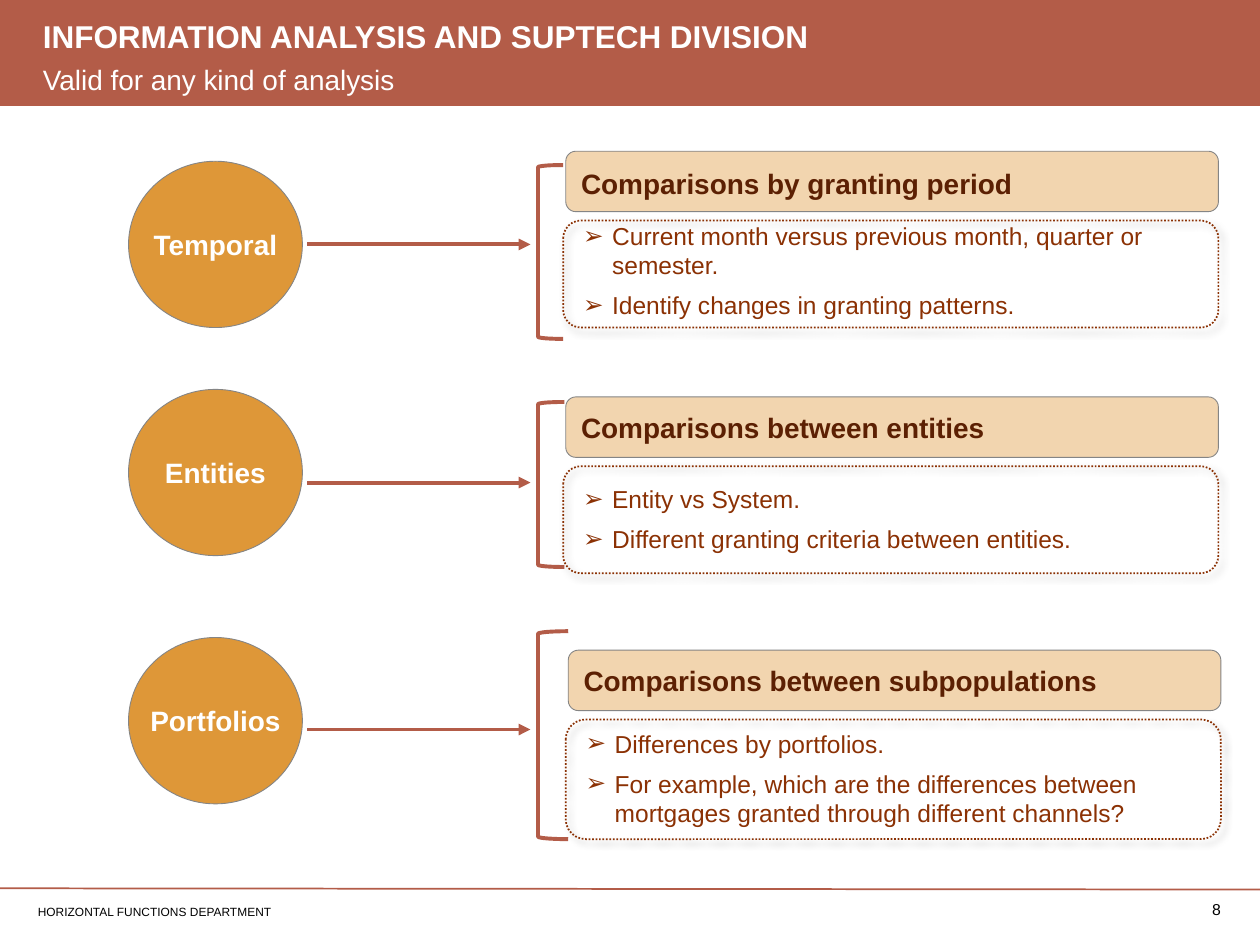
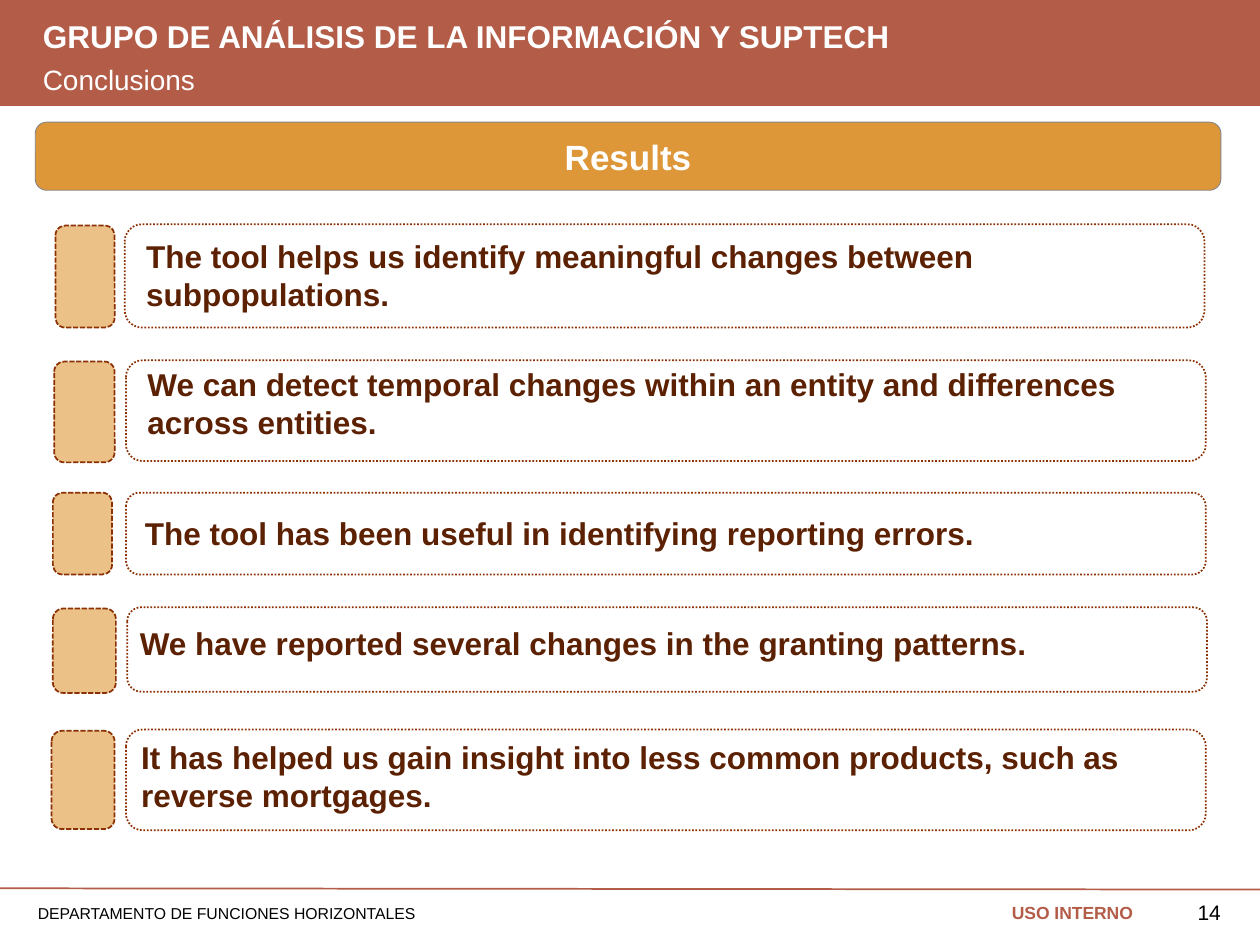
from lxml.etree import SubElement
from pptx import Presentation
from pptx.dml.color import RGBColor
from pptx.enum.dml import MSO_LINE
from pptx.enum.shapes import MSO_CONNECTOR, MSO_SHAPE
from pptx.enum.text import MSO_ANCHOR, MSO_AUTO_SIZE, PP_ALIGN
from pptx.oxml import parse_xml
from pptx.oxml.ns import nsdecls, qn
from pptx.util import Inches, Pt

HUES = {
    "brick": "B35C48", "amber": "DE9738", "sand": "F2D5AF", "tan": "EBC188",
    "rust": "8B3104", "brown": "5C2003", "gray": "858585",
    "white": "FFFFFF", "black": "000000",
}
RGB = {name: RGBColor.from_string(code) for name, code in HUES.items()}
FONT = "Arial"
ROUND = MSO_SHAPE.ROUNDED_RECTANGLE
SHADE = (f'<a:effectLst {nsdecls("a")}><a:outerShdw blurRad="50800" dist="38100" '
         'dir="2700000" algn="tl" rotWithShape="0"><a:srgbClr val="000000">'
         '<a:alpha val="40000"/></a:srgbClr></a:outerShdw></a:effectLst>')


def box(slide, kind, at, fill=None, line=None, width=0.5, dash=None):
    """Add a preset shape; a kind of None gives a text box."""
    spot = [Inches(n) for n in at]
    if kind is None:
        return slide.shapes.add_textbox(*spot)
    shape = slide.shapes.add_shape(kind, *spot)
    shape.shadow.inherit = False
    for part, hue in ((shape.fill, fill), (shape.line.fill, line)):
        if hue:
            part.solid()
            part.fore_color.rgb = RGB[hue]
        else:
            part.background()
    if line:
        shape.line.width = Pt(width)
        shape.line.dash_style = dash
    return shape


def write(shape, text, size, hue, bold=False, align=PP_ALIGN.LEFT,
          anchor=MSO_ANCHOR.TOP, pads=(0.1, 0.05, 0.1, 0.05),
          space=1.0, gap=0, mark=None, wrap=True):
    """Put text in a shape, one paragraph a line."""
    frame = shape.text_frame
    frame.text = text
    frame.word_wrap = wrap
    frame.auto_size = MSO_AUTO_SIZE.NONE
    frame.vertical_anchor = anchor
    (frame.margin_left, frame.margin_top,
     frame.margin_right, frame.margin_bottom) = [Inches(n) for n in pads]
    for i, para in enumerate(frame.paragraphs):
        props = para._p.get_or_add_pPr()
        dent = Inches(0.23) if mark else 0
        props.set("marL", str(dent))
        props.set("indent", str(-dent))
        if mark:
            SubElement(props, qn("a:buFont")).set("typeface", FONT)
            SubElement(props, qn("a:buChar")).set("char", mark)
        else:
            SubElement(props, qn("a:buNone"))
        para.alignment = align
        para.line_spacing = space
        para.space_before = Pt(gap if i else 0)
        para.space_after = Pt(gap)
        for run in para.runs:
            run.font.name = FONT
            run.font.size = Pt(size)
            run.font.bold = bold
            run.font.color.rgb = RGB[hue]


deck = Presentation()
deck.slide_width, deck.slide_height = Inches(10), Inches(7.5)

# Shared frame: band, rule, title, subtitle, footer and page number
heads = [
    ("INFORMATION ANALYSIS AND SUPTECH DIVISION", "Valid for any kind of analysis",
     "HORIZONTAL FUNCTIONS DEPARTMENT", 6.8, "8", 9),
    ("GRUPO DE ANÁLISIS DE LA INFORMACIÓN Y SUPTECH", "Conclusions",
     "DEPARTAMENTO DE FUNCIONES HORIZONTALES", 9, "14", 12),
]
for title, sub, foot, small, page, size in heads:
    slide = deck.slides.add_slide(deck.slide_layouts[3])
    band = box(slide, MSO_SHAPE.RECTANGLE, (0, 0, 10.01, 0.84), "brick")
    slide.shapes.element.insert(2, band.element)
    rule = slide.shapes.add_connector(
        MSO_CONNECTOR.STRAIGHT, 0, Inches(7.05), Inches(10.01), Inches(7.06))
    rule.line.color.rgb = RGB["brick"]
    rule.line.width = Pt(1)
    SubElement(rule.element.spPr, qn("a:effectLst"))
    texts = [
        (title, (0.24, 0.12, 6.97, 0.31), 18, "white", True),
        (sub, (0.24, 0.48, 6.97, 0.31), 16, "white", False),
        (foot, (0.2, 7.14, 5.86, 0.28), small, "black", False),
    ]
    for hold, (text, at, pt, hue, bold) in zip(slide.placeholders, texts):
        hold.left, hold.top, hold.width, hold.height = [Inches(n) for n in at]
        write(hold, text, pt, hue, bold, space=0.9)
    write(box(slide, None, (9.17, 7.09, 0.52, 0.33)), page, size, "black",
          align=PP_ALIGN.RIGHT, pads=(0.1, 0.05, 0, 0.05))

first, last = deck.slides

# Kinds of comparison: circle, arrow, bracket, heading and list
# name, circle top, arrow y, bracket (top, width, height), left edge,
# heading top, panel height, list top, heading spacing, heading, list
kinds = [
    ("Temporal", 1.28, 1.94, (1.31, 0.2, 1.38), 4.47, 1.2, 0.85, 1.7, 1.14,
     "Comparisons by granting period",
     "Current month versus previous month, quarter or semester.\n"
     "Identify changes in granting patterns."),
    ("Entities", 3.09, 3.83, (3.19, 0.21, 1.31), 4.47, 3.15, 0.85, 3.67, 1.0,
     "Comparisons between entities",
     "Entity vs System.\nDifferent granting criteria between entities."),
    ("Portfolios", 5.06, 5.79, (5.01, 0.24, 1.65), 4.49, 5.16, 0.95, 5.73, 1.0,
     "Comparisons between subpopulations",
     "Differences by portfolios.\nFor example, which are the differences "
     "between mortgages granted through different channels?"),
]
for name, top, mid, (y, w, h), left, htop, tall, ltop, space, head, points in kinds:
    disc = box(first, MSO_SHAPE.OVAL, (1.02, top, 1.38, 1.32), "amber", "gray")
    write(disc, name, 16, "white", True, PP_ALIGN.CENTER, MSO_ANCHOR.MIDDLE,
          pads=(0, 0, 0, 0), wrap=False)

    arrow = first.shapes.add_connector(
        MSO_CONNECTOR.STRAIGHT, Inches(2.44), Inches(mid), Inches(4.21), Inches(mid))
    arrow.line.color.rgb = RGB["brick"]
    arrow.line.width = Pt(2.25)
    SubElement(arrow.line._get_or_add_ln(), qn("a:tailEnd")).set("type", "triangle")
    SubElement(arrow.element.spPr, qn("a:effectLst"))

    box(first, MSO_SHAPE.LEFT_BRACKET, (4.27, y, w, h), None, "brick", 2.25)
    panel = box(first, ROUND, (left, htop + 0.55, 5.2, tall), None, "rust", 1,
                MSO_LINE.ROUND_DOT)
    props = panel.element.spPr
    props.replace(props.find(qn("a:effectLst")), parse_xml(SHADE))
    write(box(first, None, (left + 0.06, ltop, 5.19, 0.89)), points, 14, "rust",
          anchor=MSO_ANCHOR.MIDDLE, gap=3, mark="➢")
    write(box(first, ROUND, (left + 0.02, htop, 5.18, 0.48), "sand", "gray"),
          head, 16, "brown", True, anchor=MSO_ANCHOR.MIDDLE, space=space)

# Results banner and footer tag
write(box(last, ROUND, (0.28, 0.97, 9.41, 0.54), "amber", "gray"), "Results",
      20, "white", True, PP_ALIGN.CENTER, MSO_ANCHOR.MIDDLE)
write(box(last, None, (7.36, 7.11, 1.73, 0.32)), "USO INTERNO", 10, "brick",
      True, PP_ALIGN.RIGHT)

# Conclusions: tab, dotted panel and text
# tab (left, top, width, height), panel (left, top, height), text place, text
ends = [
    ((0.44, 1.79, 0.47, 0.81), (0.99, 1.78, 0.82), (1.09, 1.84, 8.38, 0.55),
     "The tool helps us identify meaningful changes between subpopulations."),
    ((0.43, 2.87, 0.48, 0.8), (1, 2.86, 0.8), (1.1, 2.86, 8.39, 1.2),
     "We can detect temporal changes within an entity and differences across entities."),
    ((0.42, 3.91, 0.47, 0.65), (1, 3.91, 0.65), (1.08, 4.04, 8.41, 0.42),
     "The tool has been useful in identifying reporting errors."),
    ((0.42, 4.83, 0.5, 0.67), (1.01, 4.82, 0.67), (1.04, 4.91, 8.45, 0.71),
     "We have reported several changes in the granting patterns."),
    ((0.41, 5.8, 0.5, 0.78), (1, 5.79, 0.8), (1.05, 5.82, 8.45, 0.71),
     "It has helped us gain insight into less common products, such as "
     "reverse mortgages."),
]
for tab, (left, top, tall), at, text in ends:
    box(last, ROUND, tab, "tan", "rust", 1, MSO_LINE.SQUARE_DOT)
    box(last, ROUND, (left, top, 8.57, tall), None, "rust", 1, MSO_LINE.ROUND_DOT)
    write(box(last, None, at), text, 18, "brown", True,
          pads=(0.07, 0.04, 0.07, 0.04), gap=4.5)

# Dash presets: fine dots for panels, short dashes for tabs
for slide in deck.slides:
    for dash in slide.shapes.element.iter(qn("a:prstDash")):
        dash.set("val", {"sysDash": "sysDash", "sysDot": "sysDot"}[dash.get("val")])

deck.save("out.pptx")
